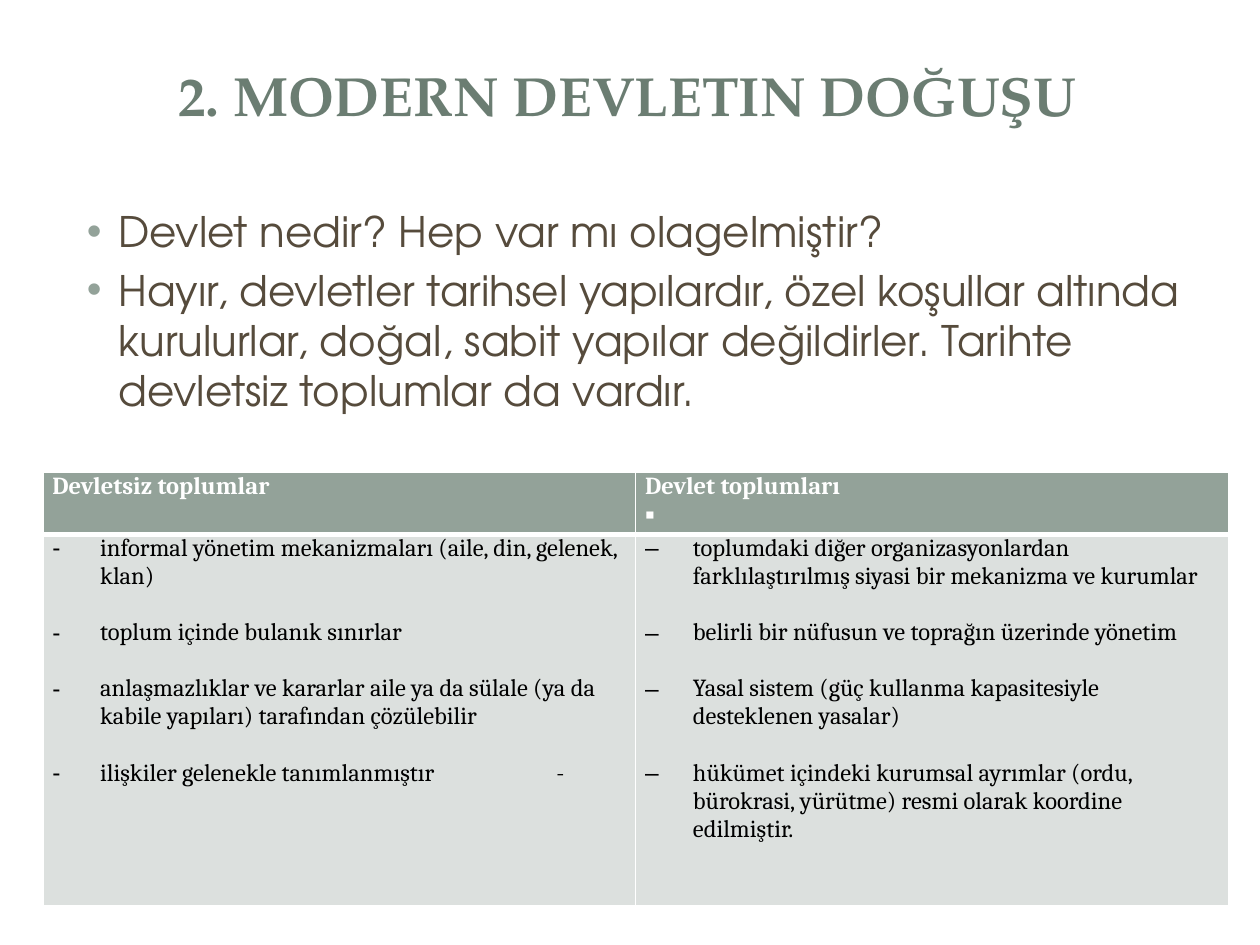
from lxml.etree import SubElement as Sub
from pptx import Presentation
from pptx.dml.color import RGBColor as RGB
from pptx.enum.shapes import MSO_SHAPE as Shape
from pptx.enum.text import MSO_ANCHOR as Anchor, MSO_AUTO_SIZE as Auto, PP_ALIGN as Align
from pptx.oxml.ns import qn
from pptx.util import Inches, Pt

TITLE = "2. MODERN DEVLETIN DOĞUŞU"
POINTS = [
    "Devlet nedir? Hep var mı olagelmiştir?",
    "Hayır, devletler tarihsel yapılardır, özel koşullar altında kurulurlar, "
    "doğal, sabit yapılar değildirler. Tarihte devletsiz toplumlar da vardır.",
]
COLUMNS = [
    {"head": ["Devletsiz toplumlar"], "mark": "-", "items": [
        "informal yönetim mekanizmaları (aile, din, gelenek, klan)",
        "toplum içinde bulanık sınırlar",
        "anlaşmazlıklar ve kararlar aile ya da sülale (ya da kabile yapıları) "
        "tarafından çözülebilir",
        "ilişkiler gelenekle tanımlanmıştır \t-"]},
    {"head": ["Devlet toplumları", "▪"], "mark": "–", "items": [
        "toplumdaki diğer organizasyonlardan farklılaştırılmış siyasi bir "
        "mekanizma ve kurumlar",
        "belirli bir nüfusun ve toprağın üzerinde yönetim",
        "Yasal sistem (güç kullanma kapasitesiyle desteklenen yasalar)",
        "hükümet içindeki kurumsal ayrımlar (ordu, bürokrasi, yürütme) resmi "
        "olarak koordine edilmiştir."]},
]
WIDE, HIGH = 10, 7.5
LEFT, SPAN = 0.46, 9.04
PANELS = [
    (Shape.ROUNDED_RECTANGLE, (0.1, 0.11, 9.8, 7.29)),
    (Shape.RECTANGLE, (0.3, 0.3, 9.4, 1.45)),
    (Shape.RECTANGLE, (0.41, 0.41, 9.17, 1.22)),
]
GRID = {"left": 0.34, "top": 3.75, "width": 9.41, "rows": [0.49, 2.95]}
SAGE, PALE, WHITE = "93A299", "DCE0DE", "FFFFFF"
HEADING = {"name": "TeX Gyre Pagella", "size": Pt(31.5), "bold": True, "color": "6B7D72"}
BODY = {"name": "TeX Gyre Adventor", "size": Pt(24), "color": "564B3C"}
HEAD = {"name": "Cambria", "size": Pt(14), "bold": True, "color": WHITE}
CELL = {**HEAD, "bold": False, "color": "000000"}


def paint(target, color):
    target.rgb = RGB.from_string(color)


def style(font, look):
    for key, value in look.items():
        if key == "color":
            paint(font.color, value)
        else:
            setattr(font, key, value)


def place(shape, *box):
    for side, size in zip(("left", "top", "width", "height"), box):
        setattr(shape, side, Inches(size))


def add_panels(slide):
    """Lay the white frames behind the placeholders."""
    tree = slide.shapes._spTree
    first = tree.index(slide.shapes[0]._element)
    for i, (kind, box) in enumerate(PANELS):
        panel = slide.shapes.add_shape(kind, *map(Inches, box))
        panel.shadow.inherit = False
        panel.fill.solid()
        paint(panel.fill.fore_color, WHITE)
        panel.line.fill.background()
        if kind == Shape.ROUNDED_RECTANGLE:
            panel.adjustments[0] = 0.02
        tree.insert(first + i, panel._element)


def write(frame, lines, look, gap=0):
    """Fill the frame with one paragraph per line, gap points apart."""
    for i, line in enumerate(lines):
        para = frame.paragraphs[0] if i == 0 else frame.add_paragraph()
        para.space_before = Pt(gap if i else 0)
        run = para.add_run()
        run.text = line
        style(run.font, look)


def mark(frame, char, indent, hang, color=None):
    for para in frame.paragraphs:
        props = para._p.get_or_add_pPr()
        props.set("marL", str(Inches(indent)))
        props.set("indent", str(-Inches(hang)))
        props.set("defTabSz", str(Inches(1)))
        if color:
            Sub(Sub(props, qn("a:buClr")), qn("a:srgbClr"), val=color)
        Sub(props, qn("a:buFont"), typeface="Arial")
        Sub(props, qn("a:buChar"), char=char)


def edge(cell, widths):
    props = cell._tc.get_or_add_tcPr()
    for side, width in zip("LRTB", widths):
        line = Sub(props, qn("a:ln" + side), w=str(Pt(width)))
        Sub(Sub(line, qn("a:solidFill")), qn("a:srgbClr"), val=WHITE)


def fill_cell(cell, lines, look, color, widths, gap=0):
    edge(cell, widths)
    cell.fill.solid()
    paint(cell.fill.fore_color, color)
    cell.margin_left = cell.margin_right = Pt(5.4)
    cell.margin_top = cell.margin_bottom = 0
    write(cell.text_frame, lines, look, gap)


def add_grid(slide):
    rows = GRID["rows"]
    box = (GRID["left"], GRID["top"], GRID["width"], sum(rows))
    table = slide.shapes.add_table(len(rows), len(COLUMNS), *map(Inches, box)).table
    for row, height in zip(table.rows, rows):
        row.height = Inches(height)
    for i, col in enumerate(COLUMNS):
        table.columns[i].width = Inches(GRID["width"] / len(COLUMNS))
        fill_cell(table.cell(0, i), col["head"], HEAD, SAGE, (1, 1, 1, 3))
        cell = table.cell(1, i)
        fill_cell(cell, col["items"], CELL, PALE, (1, 1, 3, 1), gap=16)
        mark(cell.text_frame, col["mark"], 0.38, 0.38)


def main():
    deck = Presentation()
    deck.slide_width, deck.slide_height = Inches(WIDE), Inches(HIGH)
    slide = deck.slides.add_slide(deck.slide_layouts[1])
    title, body = slide.placeholders
    add_panels(slide)

    place(title, LEFT, 0.45, SPAN, 1.14)
    frame = title.text_frame
    frame.auto_size, frame.vertical_anchor = Auto.NONE, Anchor.MIDDLE
    frame.margin_bottom = Inches(0.59)
    write(frame, [TITLE], HEADING)
    frame.paragraphs[0].alignment = Align.CENTER

    place(body, LEFT, 1.58, SPAN, 5.12)
    frame = body.text_frame
    frame.auto_size, frame.vertical_anchor = Auto.NONE, Anchor.TOP
    write(frame, POINTS, BODY, gap=4.8)
    mark(frame, "•", 0.38, 0.25, SAGE)

    add_grid(slide)
    deck.save("out.pptx")


if __name__ == "__main__":
    main()
